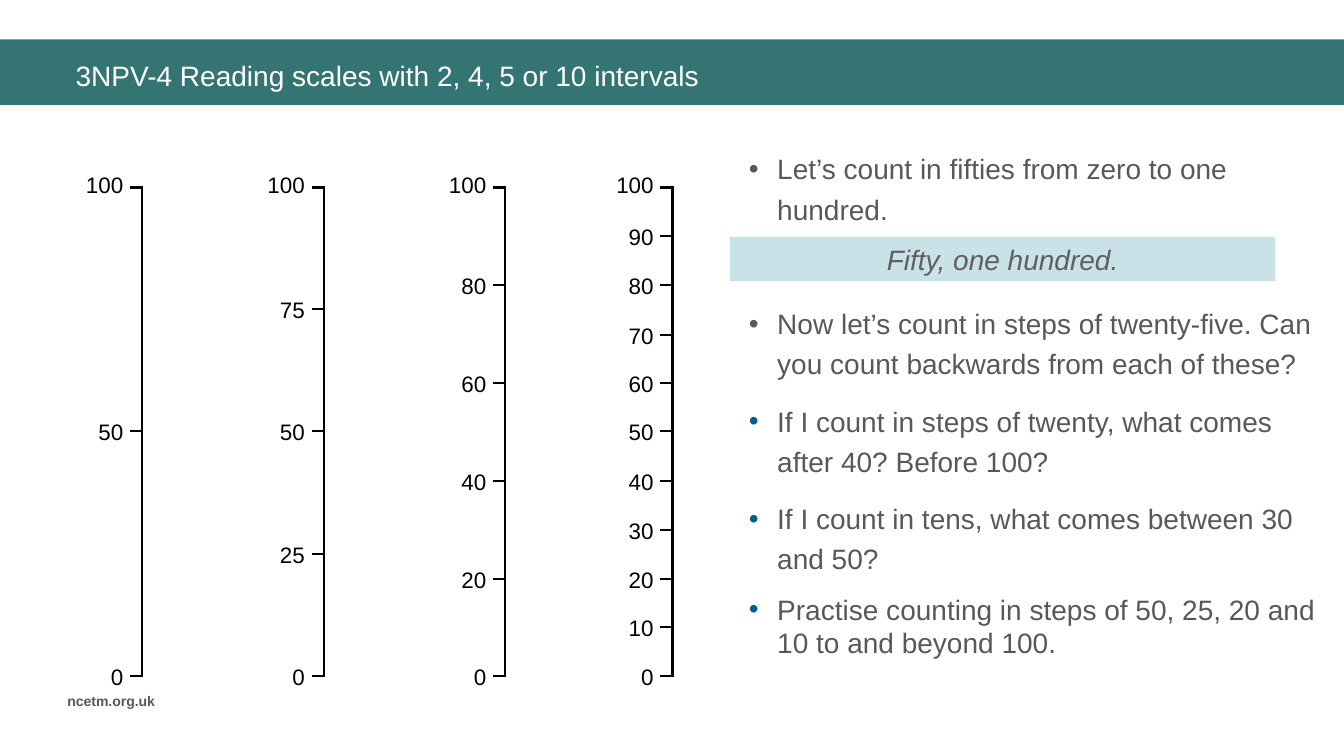
import pptx
import pptx.util
import pptx.dml.color
import pptx.enum.shapes
import pptx.enum.text
import pptx.oxml.ns
from lxml import etree

ALIGN = pptx.enum.text.PP_ALIGN
ANCHOR = pptx.enum.text.MSO_ANCHOR
SHAPE = pptx.enum.shapes.MSO_SHAPE
LINE = pptx.enum.shapes.MSO_CONNECTOR
qn = pptx.oxml.ns.qn

TEAL, PALE, GREY, BLUE = "347574", "C8E2E8", "585858", "00628C"
ZERO, SPAN = 671, 485  # height of the 0 mark, length of each scale
SCALES = [(141, 50), (321, 25), (501, 20), (667, 10)]  # axis, step
# text, bullet colour, line spacing, points before
POINTS = [
    ("Let’s count in fifties from zero to one hundred.", GREY, 1.2, 0),
    ("Now let’s count in steps of twenty-five. Can you count backwards "
     "from each of these?", GREY, 1.2, 47),
    ("If I count in steps of twenty, what comes after 40? Before 100?",
     BLUE, 1.2, 6),
    ("If I count in tens, what comes between 30 and 50?", BLUE, 1.2, 6),
    ("Practise counting in steps of 50, 25, 20 and 10 to and beyond 100.",
     BLUE, 1.0, 6),
]


def px(n):
    """Turn px, 100 to the inch, into EMU."""
    return pptx.util.Emu(n * 9144)


def rgb(code):
    return pptx.dml.color.RGBColor.from_string(code)


class Page:
    face = "Arial"

    def __init__(self, deck):
        self.slide = deck.slides.add_slide(deck.slide_layouts[5])
        self.shapes = self.slide.shapes

    def style(self, para, size, color, align=ALIGN.LEFT, bold=False,
              italic=False):
        para.alignment = align
        font = para.font
        font.name, font.size = self.face, pptx.util.Pt(size)
        font.bold, font.italic = bold, italic
        font.color.rgb = rgb(color)

    def label(self, shape, text, size, color, **look):
        """Put one line of text in the middle of a shape's height."""
        frame = shape.text_frame
        frame.word_wrap = True
        frame.vertical_anchor = ANCHOR.MIDDLE
        frame.text = text
        self.style(frame.paragraphs[0], size, color, **look)

    def title(self, box, text):
        shape = self.shapes.title
        shape.left, shape.top, shape.width, shape.height = map(px, box)
        self.label(shape, text, 20, "FFFFFF")

    def text(self, box, text, size, color, **look):
        shape = self.shapes.add_textbox(*map(px, box))
        self.label(shape, text, size, color, **look)

    def rect(self, box, fill):
        shape = self.shapes.add_shape(SHAPE.RECTANGLE, *map(px, box))
        shape.shadow.inherit = False
        shape.fill.solid()
        shape.fill.fore_color.rgb = rgb(fill)
        shape.line.fill.background()
        return shape

    def line(self, *ends):
        rule = self.shapes.add_connector(LINE.STRAIGHT, *map(px, ends))
        rule.line.color.rgb = rgb("000000")
        rule.line.width = pptx.util.Pt(1.5)
        etree.SubElement(rule.element.spPr, qn("a:effectLst"))

    def scale(self, x, step):
        """Draw an upright scale from 0 to 100 with a mark at each step."""
        self.line(x, ZERO + 1, x, ZERO - SPAN - 1)
        for value in range(0, 101, step):
            y = round(ZERO - SPAN * value / 100)
            self.line(x - 12, y, x + 1, y)
            top = y - (21 if value == 100 else 18)
            self.text((x - 91, top, 82, 37), str(value), 16, "000000",
                      align=ALIGN.RIGHT)

    def bullets(self, box, points):
        frame = self.shapes.add_textbox(*map(px, box)).text_frame
        frame.word_wrap = True
        for i, (text, color, pitch, before) in enumerate(points):
            para = frame.add_paragraph() if i else frame.paragraphs[0]
            para.text = text
            para.line_spacing = pitch
            para.space_before = pptx.util.Pt(before)
            para.space_after = pptx.util.Pt(6)
            props = para._p.get_or_add_pPr()
            props.set("marL", str(px(28)))
            props.set("indent", str(px(-28)))
            tint = etree.SubElement(props, qn("a:buClr"))
            etree.SubElement(tint, qn("a:srgbClr"), val=color)
            etree.SubElement(props, qn("a:buFont"), typeface=self.face)
            etree.SubElement(props, qn("a:buChar"), char="•")
            self.style(para, 20, GREY)


def main():
    deck = pptx.Presentation()
    deck.slide_width, deck.slide_height = px(1333), px(750)
    page = Page(deck)
    band = page.rect((0, 39, 1333, 65), TEAL)
    page.shapes.title.element.addprevious(band.element)
    page.title((65, 51, 1232, 47),
               "3NPV-4 Reading scales with 2, 4, 5 or 10 intervals")
    page.text((57, 682, 121, 27), "ncetm.org.uk", 10, GREY, bold=True)
    for x, step in SCALES:
        page.scale(x, step)
    page.bullets((733, 139, 588, 589), POINTS)
    answer = page.rect((724, 235, 541, 44), PALE)
    page.label(answer, "Fifty, one hundred.", 20, "5F5F5F",
               align=ALIGN.CENTER, italic=True)
    deck.save("out.pptx")


if __name__ == "__main__":
    main()
